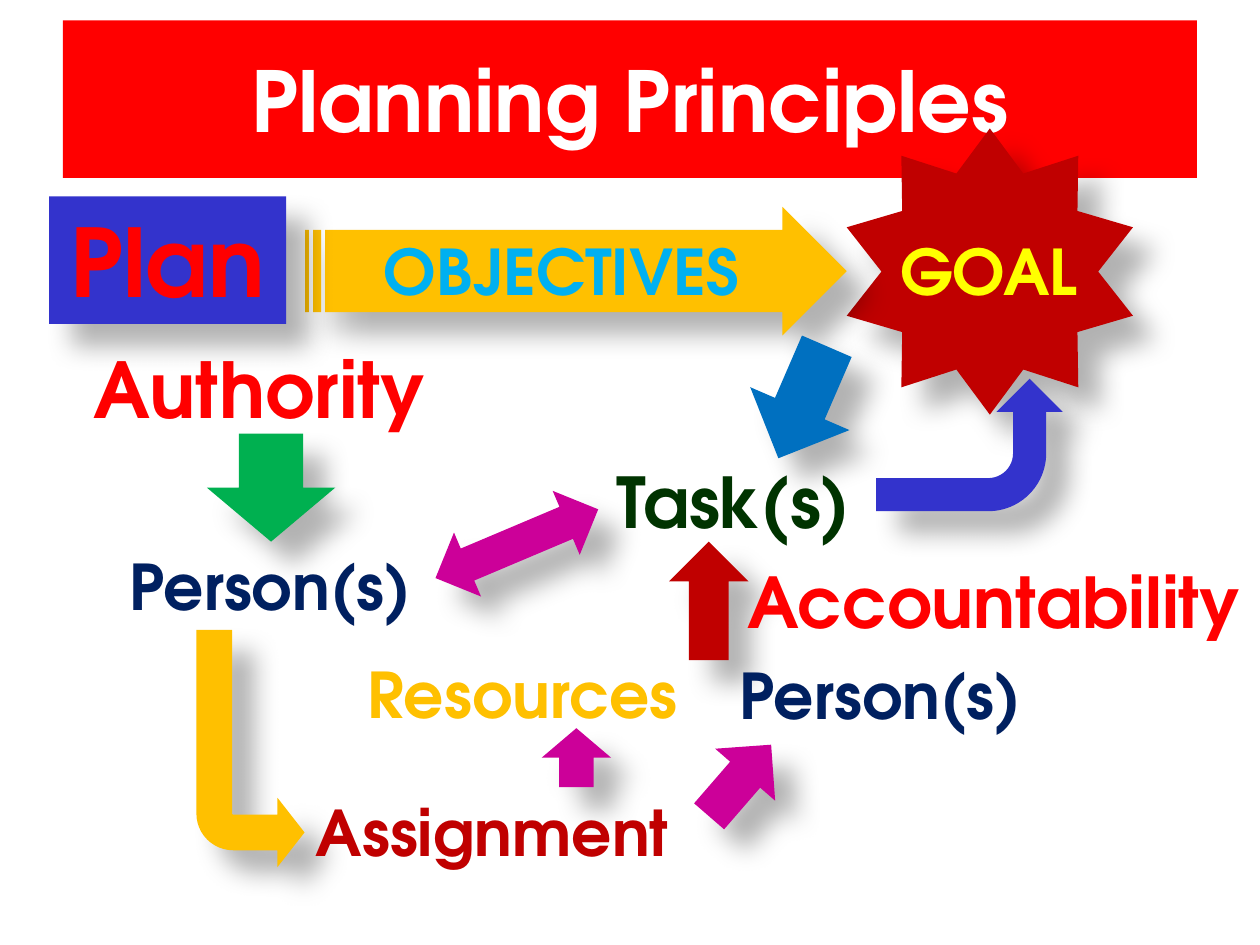
from lxml import etree
from pptx import Presentation
from pptx import util as u
from pptx.dml.color import RGBColor
from pptx.enum import shapes, text
from pptx.oxml.ns import qn

SHAPE = shapes.MSO_SHAPE
RED, DARK_RED, GOLD = "FF0000", "C00000", "FFC000"
NAVY, BLUE, MAGENTA = "002060", "3333CC", "CC0099"


def rgb(value):
    return RGBColor.from_string(value)


class Deck:
    font = "TeX Gyre Adventor"

    def __init__(self, width, height):
        self.prs = Presentation()
        self.prs.slide_width, self.prs.slide_height = u.Cm(width), u.Cm(height)
        self.s = self.prs.slides.add_slide(self.prs.slide_layouts[6])

    def add_text(self, sp, words, size, color, anchor=text.MSO_ANCHOR.TOP):
        tf = sp.text_frame
        tf.word_wrap = True
        tf.vertical_anchor = anchor
        p = tf.paragraphs[0]
        p.alignment = text.PP_ALIGN.CENTER
        r = p.add_run()
        r.text = words
        r.font.name, r.font.size, r.font.bold = self.font, u.Pt(size), True
        r.font.color.rgb = rgb(color)

    def label(self, words, box, size, color):
        sp = self.s.shapes.add_textbox(*map(u.Cm, box))
        self.add_text(sp, words, size, color)
        return sp

    def shape(self, kind, box, fill, adj=(), rot=0, flip=None, shadow=True):
        sp = self.s.shapes.add_shape(kind, *map(u.Cm, box))
        sp.fill.solid()
        sp.fill.fore_color.rgb = rgb(fill)
        sp.line.fill.background()
        sp.rotation = rot
        for i, value in enumerate(adj):
            sp.adjustments[i] = value
        if flip:
            sp._element.spPr.find(qn("a:xfrm")).set(flip, "1")
        sp.shadow.inherit = False
        if shadow:
            self.cast_shadow(sp)
        return sp

    def cast_shadow(self, sp):
        """Soft black shadow, 30 % opaque, falling down and to the right."""
        effects = sp._element.spPr.find(qn("a:effectLst"))
        outer = etree.SubElement(
            effects, qn("a:outerShdw"), blurRad=str(u.Pt(15)),
            dist=str(u.Pt(18)), dir=str(45 * 60000), algn="tl", rotWithShape="0")
        color = etree.SubElement(outer, qn("a:srgbClr"), val="000000")
        etree.SubElement(color, qn("a:alpha"), val="30000")

    def group(self, *members):
        self.s.shapes.add_group_shape(members)


def main():
    d = Deck(25.4, 19.05)

    title = d.shape(SHAPE.RECTANGLE, (1.27, 0.41, 22.86, 3.18), RED, shadow=False)
    d.add_text(title, "Planning Principles", 48, "FFFFFF", text.MSO_ANCHOR.MIDDLE)

    d.group(
        d.shape(SHAPE.STAR_10_POINT, (17.07, 2.59, 5.77, 5.77), DARK_RED, adj=[0.36]),
        d.label("GOAL", (17.65, 4.57, 4.57, 1.8), 36, "FFFF00"))
    d.group(
        d.shape(SHAPE.STRIPED_RIGHT_ARROW, (6.15, 4.17, 10.92, 2.59), GOLD,
                adj=[0.64, 0.5]),
        d.label("OBJECTIVES", (6.76, 4.57, 9.12, 1.8), 36, "00B0F0"))

    arrows = [
        (SHAPE.DOWN_ARROW, (4.17, 8.74, 2.59, 2.18), "00B050", 0),
        (SHAPE.DOWN_ARROW, (15.09, 6.88, 2.18, 2.46), "0070C0", 23.4),
        (SHAPE.LEFT_RIGHT_ARROW, (8.64, 10.26, 3.56, 1.4), MAGENTA, 337.1),
        (SHAPE.UP_ARROW, (10.92, 14.68, 1.4, 1.19), MAGENTA, 0),
        (SHAPE.UP_ARROW, (14.12, 14.78, 1.6, 1.91), MAGENTA, 40.9),
        (SHAPE.UP_ARROW, (13.49, 10.92, 1.6, 2.39), DARK_RED, 0),
    ]
    for kind, box, fill, rot in arrows:
        d.shape(kind, box, fill, rot=rot)
    d.shape(SHAPE.BENT_ARROW, (3.96, 12.7, 2.18, 4.78), GOLD,
            adj=[0.33, 0.32, 0.25, 0.34], flip="flipV")
    d.shape(SHAPE.BENT_ARROW, (18.21, 7.09, 2.67, 3.76), BLUE, rot=90, flip="flipH")

    # The trailing spaces shift the centred words slightly to the left.
    labels = [
        ("Authority ", (0.79, 6.76, 9.32, 2.13), 44, RED),
        ("Person(s)", (2.18, 10.92, 6.55, 1.8), 36, NAVY),
        ("Task(s)", (11.71, 9.12, 6.15, 1.96), 40, "003300"),
        ("Assignment ", (5.94, 15.88, 8.33, 1.8), 36, DARK_RED),
        ("Person(s)", (14.48, 13.11, 6.55, 1.8), 36, NAVY),
        ("Resources ", (7.14, 13.08, 7.14, 1.8), 36, GOLD),
        ("Accountability ", (14.68, 11.13, 10.72, 1.96), 40, RED),
    ]
    for label in labels:
        d.label(*label)

    plan = d.shape(SHAPE.RECTANGLE, (0.99, 3.96, 4.78, 2.57), BLUE)
    d.add_text(plan, "Plan ", 54, RED)

    d.prs.save("out.pptx")


if __name__ == "__main__":
    main()
